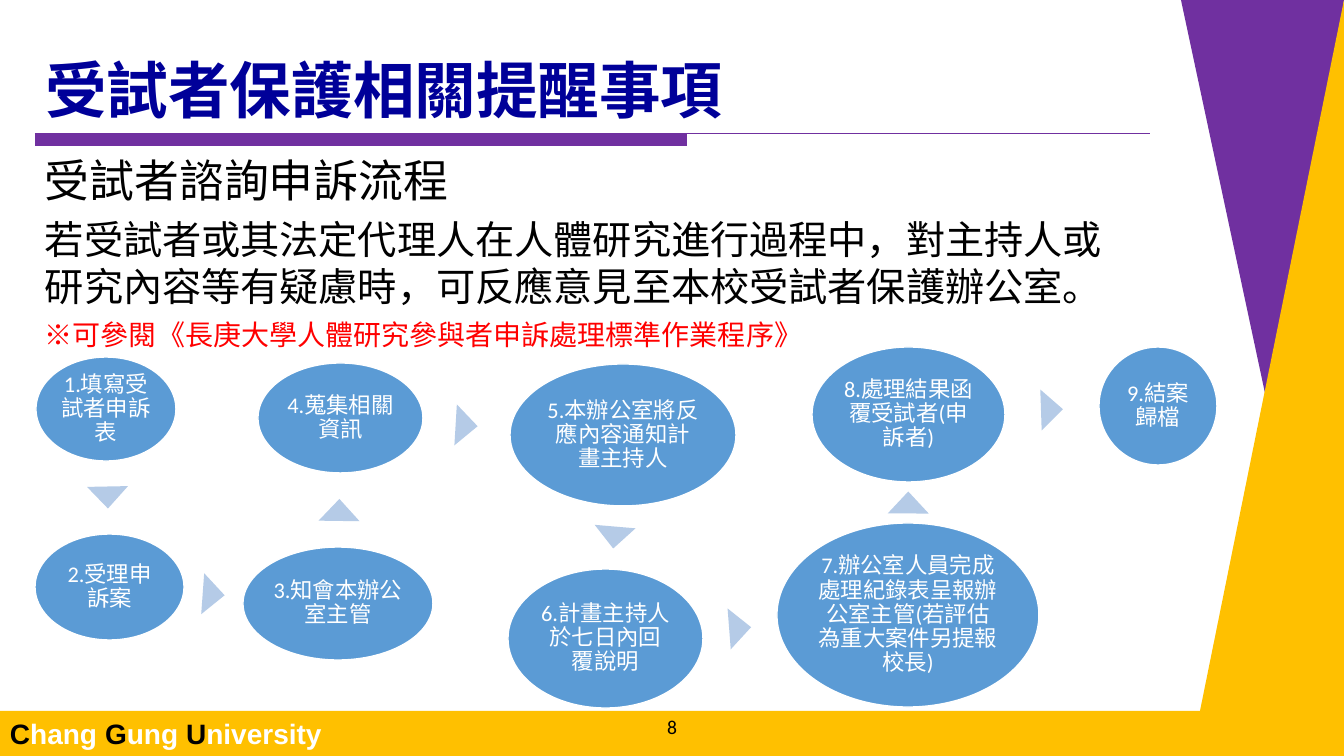
from dataclasses import dataclass
from itertools import pairwise
from math import atan2, degrees, hypot

from lxml.etree import SubElement
from pptx import Presentation
from pptx.dml.color import RGBColor
from pptx.enum.shapes import MSO_CONNECTOR, MSO_SHAPE
from pptx.enum.text import MSO_ANCHOR, MSO_AUTO_SIZE, PP_ALIGN
from pptx.oxml.ns import qn
from pptx.util import Pt

# Content
TITLE = "受試者保護相關提醒事項"
BODY = [
    ("受試者諮詢申訴流程", "heading", "black"),
    ("若受試者或其法定代理人在人體研究進行過程中，對主持人或研究內容等有疑慮時，"
     "可反應意見至本校受試者保護辦公室。", "body", "black"),
    ("※可參閱《長庚大學人體研究參與者申訴處理標準作業程序》", "note", "red"),
]
STEPS = [  # text, (left, top, width, height) in px
    ("1.填寫受試者申訴表", (36, 357, 140, 104)),
    ("2.受理申訴案", (35, 534, 149, 106)),
    ("3.知會本辦公室主管", (243, 547, 190, 113)),
    ("4.蒐集相關資訊", (258, 363, 165, 110)),
    ("5.本辦公室將反應內容通知計畫主持人", (510, 364, 226, 142)),
    ("6.計畫主持人於七日內回覆說明", (508, 569, 195, 139)),
    ("7.辦公室人員完成處理紀錄表呈報辦公室主管(若評估為重大案件另提報校長)",
     (777, 523, 262, 184)),
    ("8.處理結果函覆受試者(申訴者)", (812, 347, 193, 135)),
    ("9.結案歸檔", (1099, 347, 118, 118)),
]
FOOTER = [("C", "black"), ("hang ", "white"), ("G", "black"),
          ("ung ", "white"), ("U", "black"), ("niversity", "white")]
PAGE_NUMBER = "8"
SIDE_PANELS = [
    ([(1344, 0), (1181, 0), (1277, 449)], "purple"),
    ([(1344, 0), (1200, 711), (1344, 711)], "gold"),
]

# Layout, in px
PAGE_WIDTH, PAGE_HEIGHT = 1344, 756
TITLE_BOX = (35, 40, 1115, 92)
BODY_BOX = (35, 148, 1115, 218)
RULE_BOX = (35, 134, 652, 12)
RULE_END = 1150
FOOTER_BOX = (0, 711, 1344, 45)
NUMBER_BOX = (533, 713, 278, 28)
ARROW_WIDTH, ARROW_HEIGHT = 41, 22
STEP_INSET = 2
EMU_PER_PX = 914400 / 100.8


@dataclass(frozen=True)
class Theme:
    colors = {name: RGBColor.from_string(code) for name, code in {
        "black": "000000", "white": "FFFFFF", "red": "FF0000",
        "navy": "000099", "purple": "7030A0", "gold": "FFC000",
        "blue": "5B9BD5", "pale": "B5CBE7"}.items()}
    sizes = {"title": 44, "heading": 32, "body": 28, "note": 20,
             "footer": 20, "step": 16, "number": 14}
    cjk = "Noto Sans CJK SC"
    latin = "Calibri"
    footer = "Arial"


THEME = Theme()


def px(*lengths):
    return [round(length * EMU_PER_PX) for length in lengths]


def apply(target, values):
    for name, value in values.items():
        setattr(target, name, value)


def add_span(para, text, size, color, font, bold=False):
    span = para.add_run()
    span.text = text
    apply(span.font, {"size": Pt(THEME.sizes[size]), "name": font, "bold": bold})
    span.font.color.rgb = THEME.colors[color]
    SubElement(span.font._element, qn("a:ea"), typeface=THEME.cjk)


def paint(shape, color, outline=None):
    shape.shadow.inherit = False
    shape.fill.solid()
    shape.fill.fore_color.rgb = THEME.colors[color]
    if outline:
        shape.line.color.rgb = THEME.colors[outline]
        shape.line.width = Pt(1)
    else:
        shape.line.fill.background()


def add_box(shape_type, bounds, color, outline=None):
    box = page.shapes.add_shape(shape_type, *px(*bounds))
    paint(box, color, outline)
    return box


def add_arrow(start, end):
    """Place a triangle midway in the gap between two ellipses."""
    (x1, y1, w1, h1), (x2, y2, w2, h2) = start, end
    center_x, center_y = x1 + w1 / 2, y1 + h1 / 2
    run, rise = x2 + w2 / 2 - center_x, y2 + h2 / 2 - center_y
    leave = 1 / hypot(2 * run / w1, 2 * rise / h1)
    arrive = 1 - 1 / hypot(2 * run / w2, 2 * rise / h2)
    middle = (leave + arrive) / 2
    left = center_x + run * middle - ARROW_WIDTH / 2
    top = center_y + rise * middle - ARROW_HEIGHT / 2
    arrow = add_box(MSO_SHAPE.ISOSCELES_TRIANGLE,
                    (left, top, ARROW_WIDTH, ARROW_HEIGHT), "pale")
    arrow.rotation = degrees(atan2(run, -rise))


deck = Presentation()
deck.slide_width, deck.slide_height = px(PAGE_WIDTH, PAGE_HEIGHT)
page = deck.slides.add_slide(deck.slide_layouts[5])

# Side panels and footer band
for points, color in SIDE_PANELS:
    builder = page.shapes.build_freeform(*points[0], scale=EMU_PER_PX)
    builder.add_line_segments(points[1:], close=True)
    paint(builder.convert_to_shape(), color)

footer = add_box(MSO_SHAPE.RECTANGLE, FOOTER_BOX, "gold")
footer.text_frame.vertical_anchor = MSO_ANCHOR.MIDDLE
footer_para = footer.text_frame.paragraphs[0]
footer_para.alignment = PP_ALIGN.LEFT
for text, color in FOOTER:
    add_span(footer_para, text, "footer", color, THEME.footer, True)

# Title and its rule
title = page.shapes.title
apply(title, dict(zip(("left", "top", "width", "height"), px(*TITLE_BOX))))
apply(title.text_frame, {"vertical_anchor": MSO_ANCHOR.BOTTOM, "word_wrap": True,
                         "auto_size": MSO_AUTO_SIZE.NONE})
title_para = title.text_frame.paragraphs[0]
apply(title_para, {"alignment": PP_ALIGN.LEFT, "line_spacing": 0.9})
add_span(title_para, TITLE, "title", "navy", THEME.cjk, True)

add_box(MSO_SHAPE.RECTANGLE, RULE_BOX, "purple")
rule = page.shapes.add_connector(
    MSO_CONNECTOR.STRAIGHT, *px(RULE_BOX[0], RULE_BOX[1], RULE_END, RULE_BOX[1]))
rule.line.color.rgb = THEME.colors["purple"]
rule.line.width = Pt(0.75)
SubElement(rule._element.spPr, qn("a:effectLst"))

# Body text
body = page.shapes.add_textbox(*px(*BODY_BOX)).text_frame
body.word_wrap = True
for index, (text, size, color) in enumerate(BODY):
    para = body.add_paragraph() if index else body.paragraphs[0]
    para.space_after = Pt(6)
    add_span(para, text, size, color, THEME.cjk)

# Page number
number = page.shapes.add_textbox(*px(*NUMBER_BOX)).text_frame
apply(number, {"word_wrap": True, "vertical_anchor": MSO_ANCHOR.MIDDLE})
number.paragraphs[0].alignment = PP_ALIGN.CENTER
add_span(number.paragraphs[0], PAGE_NUMBER, "number", "black", THEME.latin)

# Process steps and the arrows between them
inset = px(STEP_INSET)[0]
for text, bounds in STEPS:
    frame = add_box(MSO_SHAPE.OVAL, bounds, "blue", "white").text_frame
    apply(frame, {"word_wrap": True, "vertical_anchor": MSO_ANCHOR.MIDDLE,
                  "margin_left": inset, "margin_right": inset,
                  "margin_top": inset, "margin_bottom": inset})
    para = frame.paragraphs[0]
    apply(para, {"alignment": PP_ALIGN.CENTER, "line_spacing": 0.9})
    add_span(para, text, "step", "white", THEME.latin)
for (_, start), (_, end) in pairwise(STEPS):
    add_arrow(start, end)

deck.save("out.pptx")
